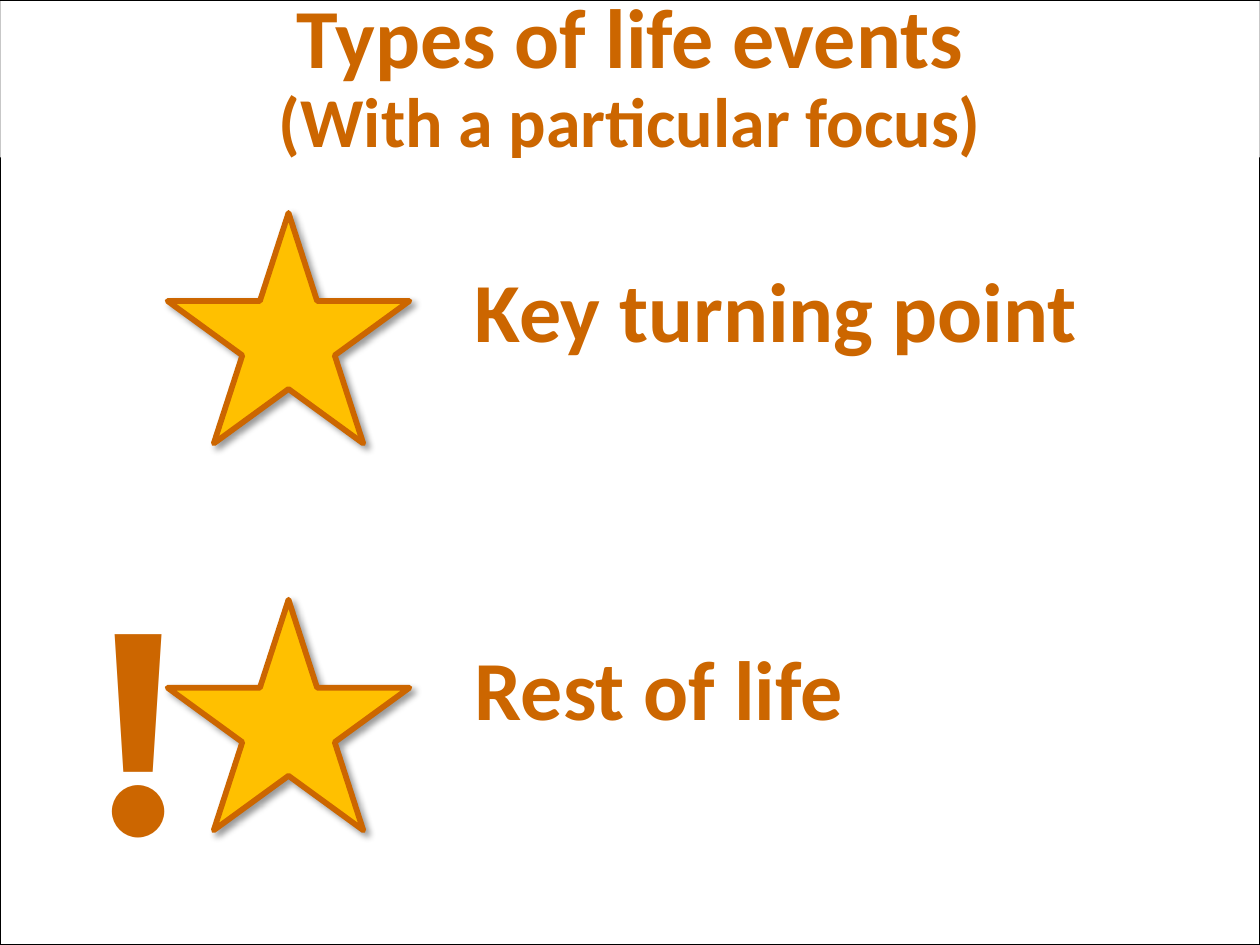
from lxml.etree import SubElement
from pptx import Presentation
from pptx.dml.color import RGBColor
from pptx.enum.shapes import MSO_SHAPE as Shape
from pptx.enum.text import MSO_ANCHOR as Anchor, MSO_AUTO_SIZE as AutoSize, PP_ALIGN as Align
from pptx.oxml.ns import qn
from pptx.util import Inches, Pt

ORANGE = RGBColor(0xCC, 0x66, 0x00)
GOLD = RGBColor(0xFF, 0xC0, 0x00)
WHITE = RGBColor(0xFF, 0xFF, 0xFF)
BLACK = RGBColor(0, 0, 0)


def add_filled_shape(slide, kind, box, fill, line=None, width=0):
    shape = slide.shapes.add_shape(kind, *map(Inches, box))
    shape.shadow.inherit = False
    shape.fill.solid()
    shape.fill.fore_color.rgb = fill
    if line is None:
        shape.line.fill.background()
    else:
        shape.line.color.rgb = line
        shape.line.width = Pt(width)
    return shape


def add_run(paragraph, text, size, font="Calibri"):
    run = paragraph.add_run()
    run.text = text
    run.font.size = Pt(size)
    run.font.name = font
    run.font.bold = True
    run.font.color.rgb = ORANGE


def add_panel(slide, box, opacity):
    """White, partly transparent rectangle for text."""
    panel = add_filled_shape(slide, Shape.RECTANGLE, box, WHITE)
    color = panel._element.spPr.find(qn("a:solidFill")).find(qn("a:srgbClr"))
    SubElement(color, qn("a:alpha"), val=str(opacity * 1000))
    panel.text_frame.word_wrap = True
    return panel


def add_title(slide, lines):
    frame = add_panel(slide, (0, 0.01, 10, 1.24), 78).text_frame
    frame.vertical_anchor = Anchor.MIDDLE
    for index, (text, size) in enumerate(lines):
        paragraph = frame.add_paragraph() if index else frame.paragraphs[0]
        paragraph.alignment = Align.CENTER
        paragraph.line_spacing = 0.9
        add_run(paragraph, text, size)


def add_caption(slide, top, text):
    frame = add_panel(slide, (3.67, top, 5.17, 0.91), 58).text_frame
    frame.vertical_anchor = Anchor.TOP
    frame.auto_size = AutoSize.SHAPE_TO_FIT_TEXT
    paragraph = frame.paragraphs[0]
    paragraph.alignment = Align.LEFT
    add_run(paragraph, text, 48)


def add_star(slide, top):
    star = add_filled_shape(slide, Shape.STAR_5_POINT, (1.33, top, 1.92, 1.83), GOLD, ORANGE, 3.25)
    properties = star._element.spPr
    SubElement(properties.find(qn("a:ln")), qn("a:round"))
    # Soft shadow to the lower right
    shadow = SubElement(properties.find(qn("a:effectLst")), qn("a:outerShdw"),
                        blurRad=str(Pt(4)), dist=str(Pt(3)), dir=str(45 * 60000),
                        algn="tl", rotWithShape="0")
    color = SubElement(shadow, qn("a:srgbClr"), val=str(BLACK))
    SubElement(color, qn("a:alpha"), val="40000")


def add_exclamation(slide):
    box = slide.shapes.add_textbox(*map(Inches, (0.67, 4.27, 0.85, 2.89)))
    box.text_frame.word_wrap = False
    box.text_frame.auto_size = AutoSize.SHAPE_TO_FIT_TEXT
    add_run(box.text_frame.paragraphs[0], "!", 166, "League Spartan")


def main():
    presentation = Presentation()
    presentation.slide_width = Inches(10)
    presentation.slide_height = Inches(7.5)
    slide = presentation.slides.add_slide(presentation.slide_layouts[6])

    # Page frame
    add_filled_shape(slide, Shape.RECTANGLE, (0, 0, 10, 7.5), WHITE, BLACK, 0.75)

    # Key turning point and title
    add_star(slide, 1.69)
    add_title(slide, [("Types of life events", 48), ("(With a particular focus)", 40)])
    add_caption(slide, 2, "Key turning point")

    # Rest of life
    add_caption(slide, 5, "Rest of life")
    add_star(slide, 4.76)
    add_exclamation(slide)

    presentation.save("out.pptx")


if __name__ == "__main__":
    main()
